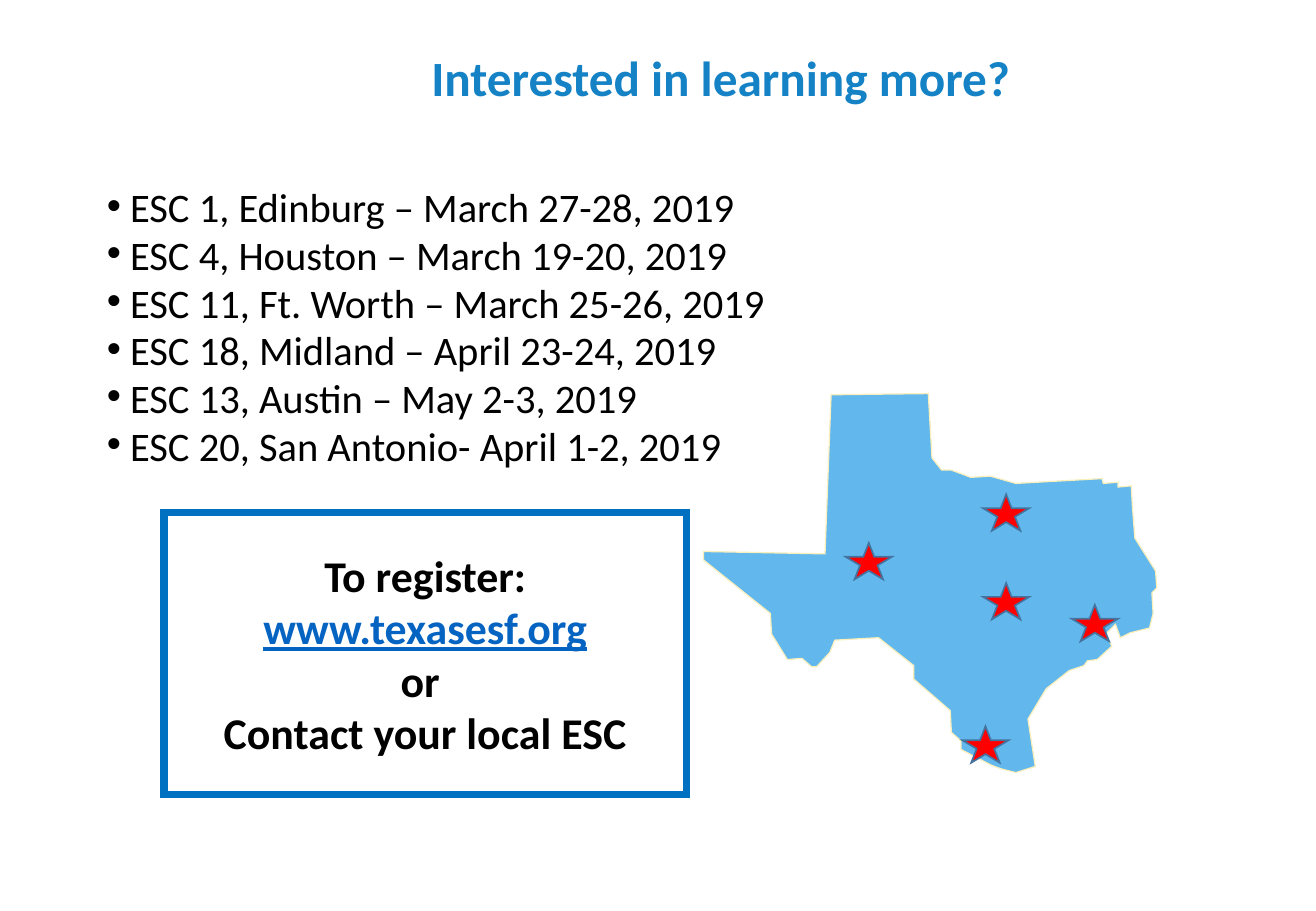
"""Build the training dates slide with its map of Texas."""

from dataclasses import dataclass

from lxml.etree import SubElement
from pptx import Presentation
from pptx.dml.color import RGBColor
from pptx.enum.shapes import MSO_SHAPE
from pptx.enum.text import MSO_ANCHOR, MSO_AUTO_SIZE, PP_ALIGN
from pptx.oxml.ns import qn
from pptx.shapes.autoshape import Shape
from pptx.slide import Slide
from pptx.text.text import TextFrame
from pptx.util import Inches, Pt

CELL = Inches(0.01)
GRID_COLUMNS, GRID_ROWS = 1083, 750
FONT = "Calibri"

TITLE_BLUE = RGBColor(0x14, 0x82, 0xC5)
FRAME_BLUE = RGBColor(0x00, 0x70, 0xC0)
LINK_BLUE = RGBColor(0x05, 0x63, 0xC1)
MAP_BLUE = RGBColor(0x62, 0xB8, 0xED)
MAP_EDGE = RGBColor(0xF9, 0xEF, 0xBD)
STAR_RED = RGBColor(0xFF, 0x00, 0x00)
STAR_EDGE = RGBColor(0x43, 0x73, 0x9E)
BLACK = RGBColor(0x00, 0x00, 0x00)


@dataclass(frozen=True)
class Area:
    """A block of grid cells."""

    column: int
    row: int
    columns: int
    rows: int

    def box(self) -> tuple[int, int, int, int]:
        """Return left, top, width and height."""
        return (self.column * CELL, self.row * CELL,
                self.columns * CELL, self.rows * CELL)


@dataclass(frozen=True)
class Star:
    """The grid cell where the star of a training city starts."""

    column: int
    row: int


TITLE_AREA = Area(156, 27, 853, 78)
DATES_AREA = Area(78, 156, 587, 251)
REGISTER_AREA = Area(135, 422, 430, 232)
STAR_COLUMNS, STAR_ROWS = 38, 30

DATES = [
    "ESC 1, Edinburg – March 27-28, 2019",
    "ESC 4, Houston – March 19-20, 2019",
    "ESC 11, Ft. Worth – March 25-26, 2019",
    "ESC 18, Midland – April 23-24, 2019",
    "ESC 13, Austin – May 2-3, 2019",
    "ESC 20, San Antonio- April 1-2, 2019",
]
WEB_ADDRESS = "www.texasesf.org"
REGISTER_LINES = ["To register:", WEB_ADDRESS, "or ", "Contact your local ESC"]

STARS = [Star(809, 407), Star(696, 447), Star(809, 480), Star(882, 498),
         Star(792, 598)]

TEXAS_BORDER = [
    (579, 454), (679, 456), (684, 325), (764, 324), (767, 377), (775, 387),
    (783, 387), (799, 393), (815, 392), (836, 398), (907, 394), (908, 398),
    (920, 397), (920, 401), (931, 400), (932, 418), (934, 443), (951, 470),
    (952, 484), (948, 488), (949, 505), (946, 517), (930, 521), (922, 525),
    (918, 514), (910, 522), (915, 532), (903, 543), (895, 544), (892, 548),
    (880, 552), (861, 567), (846, 592), (852, 631), (836, 636), (824, 633),
    (816, 630), (791, 617), (791, 610), (783, 603), (782, 585), (752, 559),
    (752, 548), (723, 525), (687, 527), (683, 537), (672, 549), (668, 549),
    (660, 542), (648, 543), (635, 522), (634, 505), (584, 465), (579, 461),
]


def move(shape: Shape, area: Area) -> None:
    """Place a shape on an area of the grid."""
    shape.left, shape.top, shape.width, shape.height = area.box()


def write(frame: TextFrame, lines: list[str], size: float, color: RGBColor,
          bold: bool, alignment: PP_ALIGN) -> None:
    """Fill a text frame with evenly formatted lines."""
    frame.text = "\n".join(lines)
    frame.word_wrap = True
    frame.auto_size = MSO_AUTO_SIZE.NONE
    for paragraph in frame.paragraphs:
        paragraph.alignment = alignment
        paragraph.space_before = Pt(0)
        for run in paragraph.runs:
            run.font.name = FONT
            run.font.size = Pt(size)
            run.font.bold = bold
            run.font.color.rgb = color


def set_indent(frame: TextFrame, margin: float, hanging: float) -> None:
    """Give every paragraph a left margin and a hanging indent in inches."""
    for paragraph in frame.paragraphs:
        properties = paragraph._p.get_or_add_pPr()
        properties.set("marL", str(Inches(margin)))
        properties.set("indent", str(-Inches(hanging)))


def paint(shape: Shape, fill: RGBColor | None, edge: RGBColor,
          weight: float) -> None:
    """Set the fill and a sharp-cornered outline and drop the shadow."""
    shape.shadow.inherit = False
    if fill is None:
        shape.fill.background()
    else:
        shape.fill.solid()
        shape.fill.fore_color.rgb = fill
    shape.line.color.rgb = edge
    shape.line.width = Pt(weight)
    outline = shape._element.spPr.find(qn("a:ln"))
    SubElement(outline, qn("a:miter"), lim="800000")


def add_title(slide: Slide) -> None:
    """Write the slide title."""
    title = slide.shapes.title
    move(title, TITLE_AREA)
    frame = title.text_frame
    write(frame, ["Interested in learning more?"], 29.2, TITLE_BLUE, True,
          PP_ALIGN.CENTER)
    frame.vertical_anchor = MSO_ANCHOR.MIDDLE
    frame.paragraphs[0].line_spacing = 0.9
    set_indent(frame, 0.41, 0.2)


def add_dates(slide: Slide) -> None:
    """Write the bulleted list of training dates."""
    body = slide.placeholders[1]
    move(body, DATES_AREA)
    frame = body.text_frame
    write(frame, DATES, 24, BLACK, False, PP_ALIGN.LEFT)
    frame.vertical_anchor = MSO_ANCHOR.TOP
    set_indent(frame, 0.19, 0.19)
    for index, paragraph in enumerate(frame.paragraphs):
        paragraph.line_spacing = 0.7
        paragraph.space_before = Pt(8.1 if index else 0)


def add_map(slide: Slide) -> None:
    """Draw Texas and a star on each training city."""
    builder = slide.shapes.build_freeform(*TEXAS_BORDER[0], scale=CELL)
    builder.add_line_segments(TEXAS_BORDER[1:], close=True)
    paint(builder.convert_to_shape(), MAP_BLUE, MAP_EDGE, 0.75)
    for star in STARS:
        area = Area(star.column, star.row, STAR_COLUMNS, STAR_ROWS)
        shape = slide.shapes.add_shape(MSO_SHAPE.STAR_5_POINT, *area.box())
        paint(shape, STAR_RED, STAR_EDGE, 1)


def add_register_box(slide: Slide) -> None:
    """Draw the framed note on how to register."""
    box = slide.shapes.add_shape(MSO_SHAPE.RECTANGLE, *REGISTER_AREA.box())
    paint(box, None, FRAME_BLUE, 4.5)
    frame = box.text_frame
    write(frame, REGISTER_LINES, 26, BLACK, True, PP_ALIGN.CENTER)
    frame.vertical_anchor = MSO_ANCHOR.MIDDLE
    address = frame.paragraphs[REGISTER_LINES.index(WEB_ADDRESS)].runs[0]
    address.font.color.rgb = LINK_BLUE
    address.font.underline = True


def main() -> None:
    """Build and save the presentation."""
    presentation = Presentation()
    presentation.slide_width = GRID_COLUMNS * CELL
    presentation.slide_height = GRID_ROWS * CELL
    slide = presentation.slides.add_slide(presentation.slide_layouts[1])
    add_title(slide)
    add_dates(slide)
    add_map(slide)
    add_register_box(slide)
    presentation.save("out.pptx")


if __name__ == "__main__":
    main()
